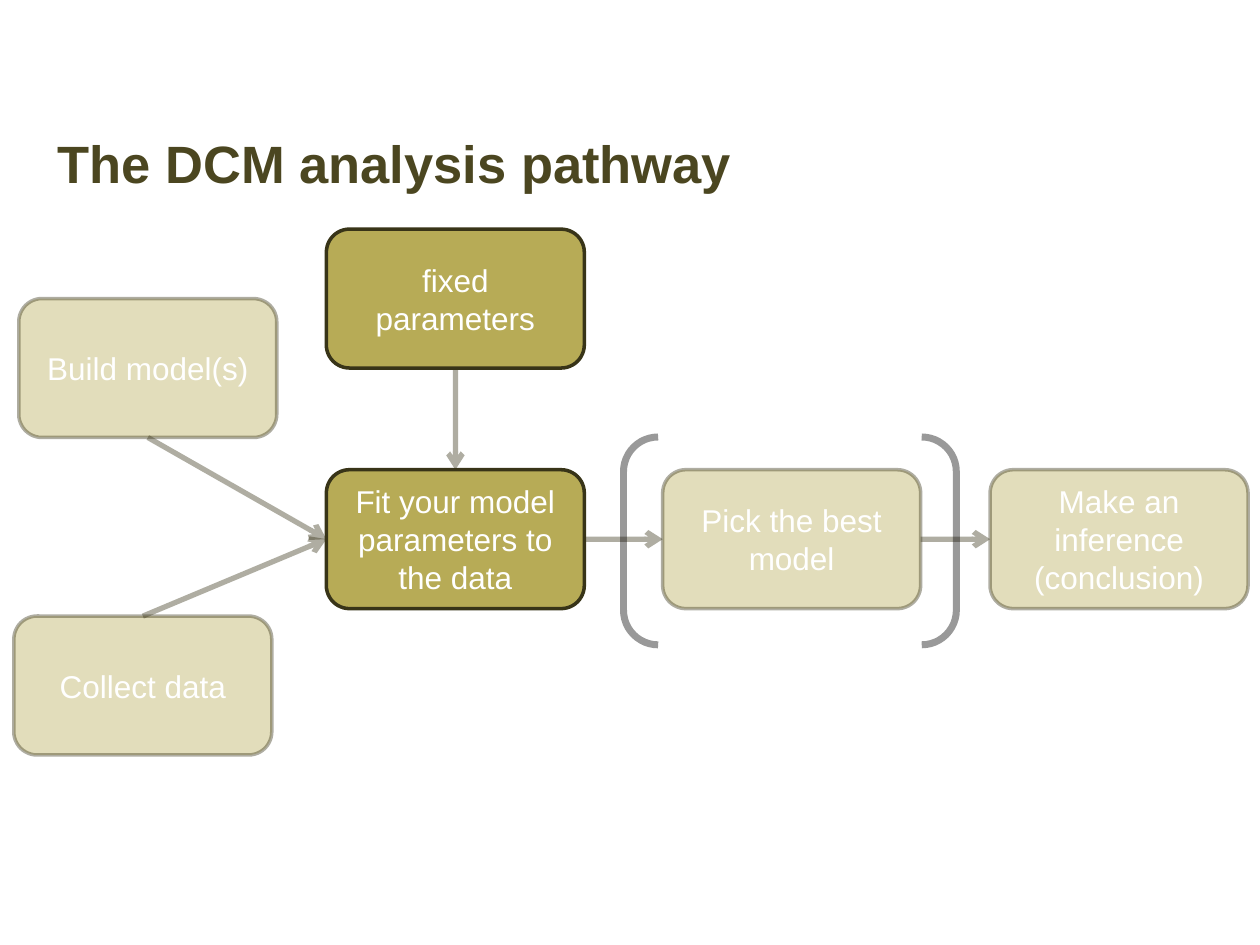
from lxml.etree import SubElement
from pptx import Presentation
from pptx.dml.color import RGBColor
from pptx.enum.shapes import MSO_CONNECTOR, MSO_SHAPE
from pptx.enum.text import MSO_ANCHOR, PP_ALIGN
from pptx.oxml.ns import qn
from pptx.util import Cm, Pt

COLORS = {"box": "B7AB56", "edge": "383418", "title": "4B4620",
          "text": "FFFFFF", "bracket": "000000"}
FONT = "Arial"
BOX_W, BOX_H = 5.2, 2.8
TOP, LEFT, BOTTOM, RIGHT = range(4)


def rgb(name):
    return RGBColor.from_string(COLORS[name])


def fade(spPr):
    """Make every fill and line colour 40 % opaque."""
    for color in spPr.iter(qn("a:srgbClr")):
        SubElement(color, qn("a:alpha")).set("val", "40000")


class Pathway:
    def __init__(self, prs):
        self.s = prs.slides.add_slide(prs.slide_layouts[5])

    def add_text(self, tf, text, size, color, align, anchor, bold=False):
        tf.word_wrap = True
        tf.vertical_anchor = anchor
        p = tf.paragraphs[0]
        p.alignment = align
        r = p.add_run()
        r.text = text
        r.font.name, r.font.size, r.font.bold = FONT, Pt(size), bold
        r.font.color.rgb = rgb(color)

    def title(self, text, x, y, w, h):
        sp = self.s.shapes.title
        sp.left, sp.top, sp.width, sp.height = Cm(x), Cm(y), Cm(w), Cm(h)
        self.add_text(sp.text_frame, text, 30, "title", PP_ALIGN.LEFT,
                      MSO_ANCHOR.TOP, bold=True)

    def box(self, text, x, y, faded=True):
        sp = self.s.shapes.add_shape(MSO_SHAPE.ROUNDED_RECTANGLE,
                                     Cm(x), Cm(y), Cm(BOX_W), Cm(BOX_H))
        sp.shadow.inherit = False
        sp.fill.solid()
        sp.fill.fore_color.rgb = rgb("box")
        sp.line.color.rgb = rgb("edge")
        sp.line.width = Pt(2)
        if faded:
            fade(sp._element.spPr)
        self.add_text(sp.text_frame, text, 18, "text", PP_ALIGN.CENTER,
                      MSO_ANCHOR.MIDDLE)
        return sp

    def arrow(self, start, start_side, end, end_side):
        c = self.s.shapes.add_connector(MSO_CONNECTOR.STRAIGHT, 0, 0, 0, 0)
        c.begin_connect(start, start_side)
        c.end_connect(end, end_side)
        c.line.color.rgb = rgb("edge")
        c.line.width = Pt(3)
        spPr = c._element.spPr
        fade(spPr)
        SubElement(spPr.find(qn("a:ln")), qn("a:tailEnd")).set("type", "arrow")
        SubElement(spPr, qn("a:effectLst"))

    def brackets(self, x, y, w, h):
        sp = self.s.shapes.add_shape(MSO_SHAPE.DOUBLE_BRACKET,
                                     Cm(x), Cm(y), Cm(w), Cm(h))
        sp.shadow.inherit = False
        sp.fill.background()
        sp.line.color.rgb = rgb("bracket")
        sp.line.width = Pt(4)
        fade(sp._element.spPr)


def main():
    prs = Presentation()
    prs.slide_width, prs.slide_height = Cm(25.4), Cm(19.05)
    slide = Pathway(prs)
    slide.title("The DCM analysis pathway", 0.91, 2.51, 23.57, 3.61)

    # Steps of the analysis
    row_y, fit_x = 9.47, 6.58
    collect = slide.box("Collect data", 0.28, 12.42)
    build = slide.box("Build model(s)", 0.38, 6.02)
    fit = slide.box("Fit your model parameters to the data", fit_x, row_y,
                    faded=False)
    pick = slide.box("Pick the best model", 13.36, row_y)
    infer = slide.box("Make an inference (conclusion)", 19.96, row_y)

    # Flow between the steps
    slide.arrow(collect, TOP, fit, LEFT)
    slide.arrow(build, BOTTOM, fit, LEFT)
    slide.arrow(pick, RIGHT, infer, LEFT)
    slide.arrow(fit, RIGHT, pick, LEFT)

    # Optional step
    slide.brackets(12.57, 8.81, 6.71, 4.19)

    # Fixed parameters feed the fit
    fixed = slide.box("fixed parameters", fit_x, 4.62, faded=False)
    slide.arrow(fixed, BOTTOM, fit, TOP)

    prs.save("out.pptx")


if __name__ == "__main__":
    main()
